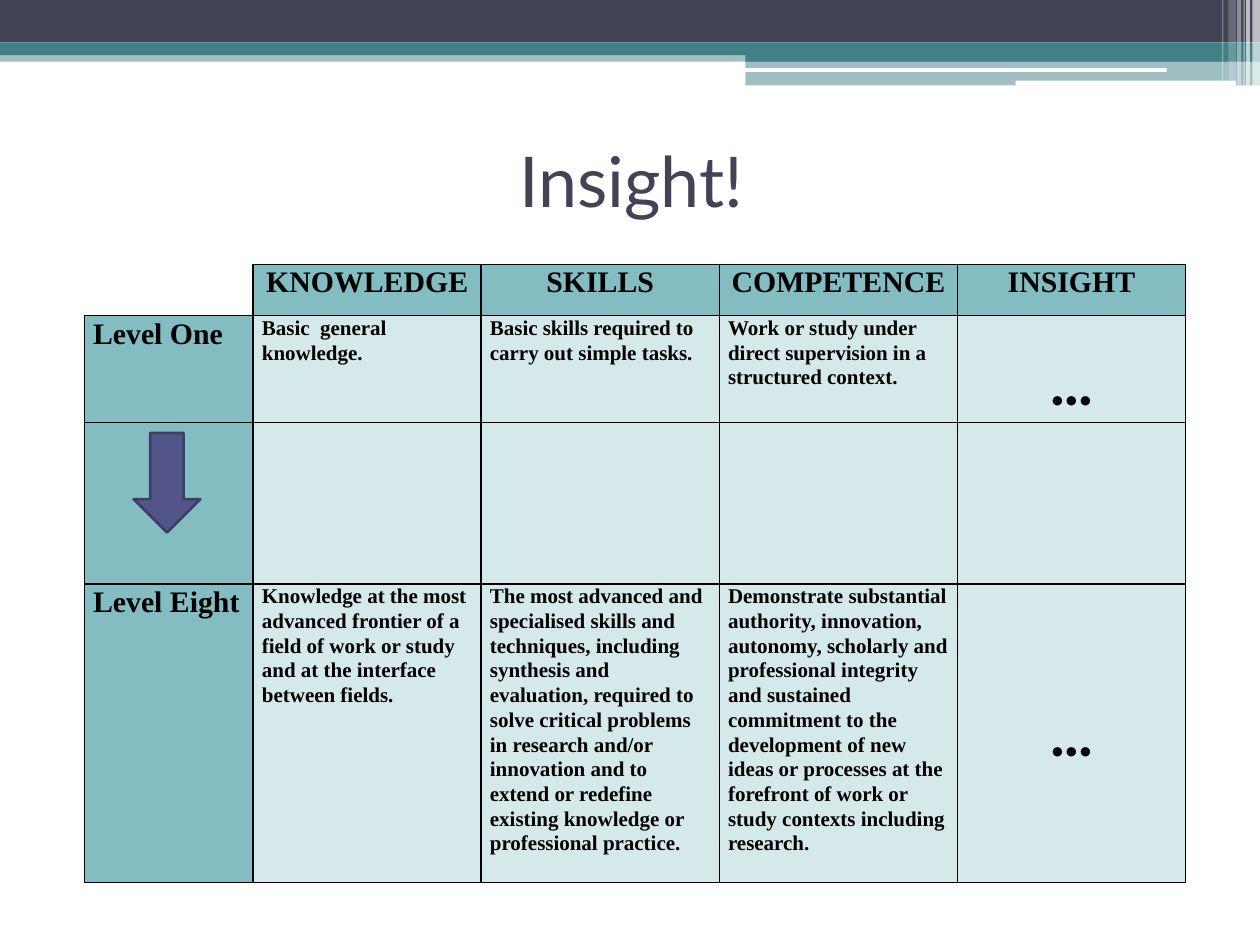
from dataclasses import dataclass

from lxml.etree import SubElement
from pptx import Presentation
from pptx.dml.color import RGBColor
from pptx.enum.shapes import MSO_SHAPE
from pptx.enum.text import MSO_ANCHOR, PP_ALIGN
from pptx.oxml import parse_xml
from pptx.oxml.ns import nsdecls, qn
from pptx.util import Pt


@dataclass(frozen=True)
class Theme:
    navy: str = "424456"
    teal: str = "438086"
    white: str = "FFFFFF"
    black: str = "000000"
    header: str = "83BCC1"
    body: str = "D6E9EA"
    arrow: str = "53548A"
    arrow_line: str = "3D3E66"
    title_font: str = "Lato"
    table_font: str = "Times New Roman"
    dots_font: str = "Calibri"
    title_size: int = 40
    header_size: int = 17
    body_size: int = 12
    dots_size: int = 36
    line_spacing: float = 1.06


class SlideBuilder:
    def __init__(self, slide, theme):
        self.slide = slide
        self.theme = theme

    def shape(self, kind, box, color, alpha=100, line=None):
        shape = self.slide.shapes.add_shape(kind, *map(Pt, box))
        shape.shadow.inherit = False
        shape.fill.solid()
        shape.fill.fore_color.rgb = RGBColor.from_string(color)
        if alpha < 100:
            color_element = shape.fill._xPr.find(qn("a:solidFill"))[0]
            SubElement(color_element, qn("a:alpha"), val=str(alpha * 1000))
        if line:
            shape.line.color.rgb = RGBColor.from_string(line)
            shape.line.width = Pt(1.5)
        else:
            shape.line.fill.background()
        return shape

    def text(self, text_frame, text, font, size, color, align, bold=False):
        text_frame.text = text
        paragraph = text_frame.paragraphs[0]
        paragraph.alignment = align
        for run in paragraph.runs:
            run.font.name = font
            run.font.size = Pt(size)
            run.font.bold = bold
            run.font.color.rgb = RGBColor.from_string(color)
        return paragraph

    def title(self, box, text):
        text_frame = self.slide.shapes.add_textbox(*map(Pt, box)).text_frame
        text_frame.word_wrap = True
        text_frame.vertical_anchor = MSO_ANCHOR.MIDDLE
        theme = self.theme
        self.text(text_frame, text, theme.title_font, theme.title_size, theme.navy, PP_ALIGN.CENTER)

    def borders(self, cell, hidden=()):
        properties = cell._tc.get_or_add_tcPr()
        for index, side in enumerate("LRTB"):
            paint = (
                "<a:noFill/>" if side in hidden
                else f'<a:solidFill><a:srgbClr val="{self.theme.black}"/></a:solidFill>'
            )
            properties.insert(index, parse_xml(
                f'<a:ln{side} {nsdecls("a")} w="{Pt(1)}">{paint}</a:ln{side}>'
            ))

    def cell(self, cell, text, is_header, is_top):
        theme = self.theme
        font, size, align = theme.table_font, theme.body_size, PP_ALIGN.LEFT
        if is_header:
            size = theme.header_size
            align = PP_ALIGN.CENTER if is_top else PP_ALIGN.JUSTIFY
        elif text == "…":
            font, size, align = theme.dots_font, theme.dots_size, PP_ALIGN.CENTER
        cell.margin_left = cell.margin_right = Pt(5)
        cell.margin_top = cell.margin_bottom = 0
        cell.fill.solid()
        cell.fill.fore_color.rgb = RGBColor.from_string(theme.header if is_header else theme.body)
        paragraph = self.text(cell.text_frame, text, font, size, theme.black, align, bold=True)
        paragraph.line_spacing = theme.line_spacing

    def table(self, left, top, widths, heights, rows):
        frame = self.slide.shapes.add_table(
            len(rows), len(widths), Pt(left), Pt(top), Pt(sum(widths)), Pt(sum(heights))
        )
        table = frame.table
        table.first_row = table.horz_banding = False
        for column, width in zip(table.columns, widths):
            column.width = Pt(width)
        for row, height in zip(table.rows, heights):
            row.height = Pt(height)
        for row_index, row in enumerate(rows):
            for column_index, text in enumerate(row):
                cell = table.cell(row_index, column_index)
                is_corner = row_index == column_index == 0
                if is_corner:
                    cell.fill.background()
                else:
                    self.cell(cell, text, row_index == 0 or column_index == 0, row_index == 0)
                self.borders(cell, hidden="LT" if is_corner else "")
        return table


def draw_banner(builder):
    theme = builder.theme
    bars = [
        (0, 28.8, 720, 6.5, theme.teal, 50),
        (0, 0, 720, 24.3, theme.navy, 100),
        (0, 24.3, 720, 7.2, theme.teal, 100),
        (426, 28.1, 294, 7.2, theme.teal, 100),
        (426, 34.8, 294, 14, theme.teal, 50),
    ]
    for *box, color, alpha in bars:
        builder.shape(MSO_SHAPE.RECTANGLE, box, color, alpha)

    for box in [(425.5, 38.9, 241.2, 2.2), (580.3, 46.1, 126, 2.9)]:
        builder.shape(MSO_SHAPE.ROUNDED_RECTANGLE, box, theme.white)

    stripes = [
        (715.7, 4.3, 49, 65),
        (712.1, 2.2, 49, 65),
        (710.6, 0.7, 49, 60),
        (707, 2.2, 49, 40),
        (702, 4.3, 46.1, 20),
        (698.4, 0.7, 46.1, 30),
    ]
    for left, width, height, alpha in stripes:
        builder.shape(MSO_SHAPE.RECTANGLE, (left, 0, width, height), theme.white, alpha)


def main():
    presentation = Presentation()
    presentation.slide_width, presentation.slide_height = Pt(720), Pt(540)
    slide = presentation.slides.add_slide(presentation.slide_layouts[6])
    theme = Theme()
    builder = SlideBuilder(slide, theme)
    draw_banner(builder)

    rows = [
        ["", "KNOWLEDGE", "SKILLS", "COMPETENCE", "INSIGHT"],
        [
            "Level One",
            "Basic  general knowledge.",
            "Basic skills required to carry out simple tasks.",
            "Work or study under direct supervision in a structured context.",
            "…",
        ],
        [""] * 5,
        [
            "Level Eight",
            "Knowledge at the most advanced frontier of a field of work or study "
            "and at the interface between fields.",
            "The most advanced and specialised skills and techniques, including "
            "synthesis and evaluation, required to solve critical problems in research "
            "and/or innovation and to extend or redefine existing knowledge or "
            "professional practice.",
            "Demonstrate substantial authority, innovation, autonomy, scholarly and "
            "professional integrity and sustained commitment to the development of new "
            "ideas or processes at the forefront of work or study contexts including "
            "research.",
            "…",
        ],
    ]
    table = builder.table(
        48.2, 151, [96.5, 130.3, 136.1, 136.1, 130.3], [22.9, 61.2, 92.2, 170.6], rows
    )
    table.cell(1, 4).vertical_anchor = MSO_ANCHOR.BOTTOM
    table.cell(3, 4).vertical_anchor = MSO_ANCHOR.MIDDLE

    builder.shape(
        MSO_SHAPE.DOWN_ARROW, (76.3, 247.4, 38.2, 56.9), theme.arrow, line=theme.arrow_line
    )
    builder.title((36.7, 60.5, 648, 84.2), "Insight!")
    presentation.save("out.pptx")


if __name__ == "__main__":
    main()
